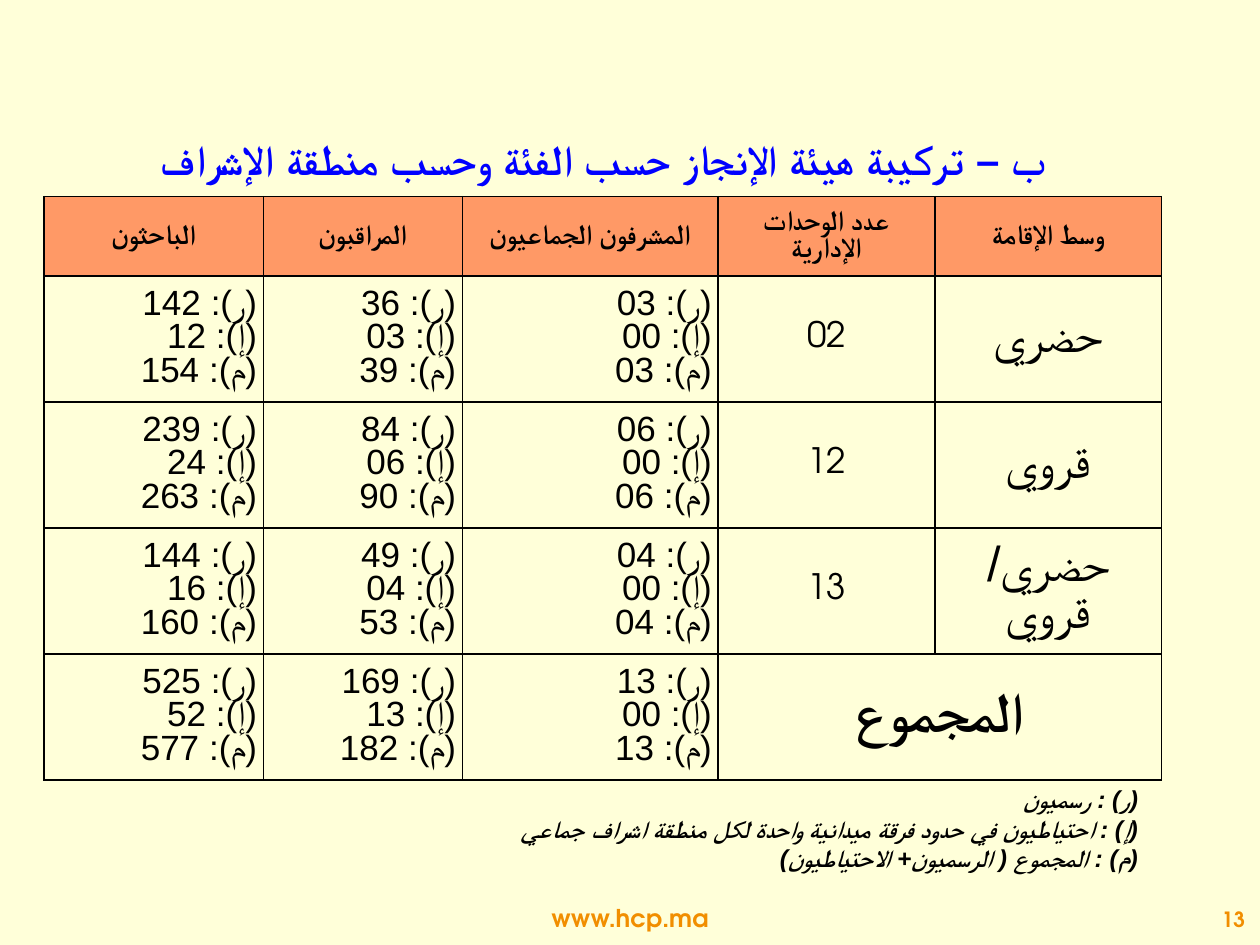
from dataclasses import dataclass

from lxml import etree
from pptx import Presentation
from pptx.dml.color import RGBColor
from pptx.enum.text import MSO_ANCHOR, MSO_AUTO_SIZE, PP_ALIGN
from pptx.oxml.ns import qn
from pptx.util import Inches, Pt

MID, RIGHT = PP_ALIGN.CENTER, PP_ALIGN.RIGHT
CENTER, BOTTOM = MSO_ANCHOR.MIDDLE, MSO_ANCHOR.BOTTOM
FIXED = MSO_AUTO_SIZE.NONE


@dataclass
class Theme:
    back: str = "FFFFD9"
    ink: str = "000000"
    title: str = "0000FF"
    head: str = "FF9966"
    accent: str = "F18E00"
    sans: str = "Arial"
    serif: str = "Times New Roman"
    round: str = "TeX Gyre Adventor"
    title_size: int = 24
    head_size: int = 16
    body_size: int = 20
    area_size: int = 28
    total_size: int = 32
    note_size: int = 14
    page_size: int = 12


class Deck:
    def __init__(self, prs, theme):
        self.theme = theme
        self.slide = prs.slides.add_slide(prs.slide_layouts[5])
        fill = self.slide.background.fill
        fill.solid()
        fill.fore_color.rgb = RGBColor.from_string(theme.back)

    def put(self, frame, lines, size, face, color=None, align=MID,
            bold=False, italic=False, rtl=False, space=None):
        """Fill a text frame, one paragraph a line."""
        for i, line in enumerate(lines):
            para = frame.add_paragraph() if i else frame.paragraphs[0]
            para.alignment = align
            if space:
                para.line_spacing = space
            if rtl:
                para._p.get_or_add_pPr().set("rtl", "1")
            run = para.add_run()
            run.text = line
            font = run.font
            font.size, font.name = Pt(size), face
            font.bold, font.italic = bold, italic
            font.color.rgb = RGBColor.from_string(color or self.theme.ink)
            # Arabic script takes the complex-script face
            script = self.theme.sans if face == self.theme.round else face
            etree.SubElement(run._r.get_or_add_rPr(), qn("a:cs"), typeface=script)

    def title(self, text, box):
        shape = self.slide.shapes.title
        shape.left, shape.top, shape.width, shape.height = map(Inches, box)
        frame = shape.text_frame
        frame.word_wrap, frame.auto_size = True, FIXED
        frame.vertical_anchor = BOTTOM
        frame.margin_right, frame.margin_bottom = Inches(0.43), Inches(0.19)
        self.put(frame, [text], self.theme.title_size, self.theme.sans,
                 self.theme.title, RIGHT, bold=True, rtl=True)

    def text(self, lines, box, size, face, **style):
        frame = self.slide.shapes.add_textbox(*map(Inches, box)).text_frame
        frame.word_wrap = True
        frame.vertical_anchor = CENTER
        self.put(frame, lines, size, face, **style)

    def cell(self, cell, lines, size, face, fill=None, **style):
        cell.vertical_anchor = CENTER
        cell.margin_left = cell.margin_right = Inches(0.05)
        cell.margin_top = cell.margin_bottom = 0
        self.put(cell.text_frame, lines, size, face, space=0.85, **style)
        self.paint(cell, fill)

    def paint(self, cell, fill=None):
        """Set a cell's fill and its four borders."""
        if fill:
            cell.fill.solid()
            cell.fill.fore_color.rgb = RGBColor.from_string(fill)
        else:
            cell.fill.background()
        props = cell._tc.get_or_add_tcPr()
        for i, side in enumerate(("lnL", "lnR", "lnT", "lnB")):
            line = etree.Element(qn("a:" + side), w=str(Pt(1)))
            solid = etree.SubElement(line, qn("a:solidFill"))
            etree.SubElement(solid, qn("a:srgbClr"), val=self.theme.ink)
            props.insert(i, line)

    def table(self, heads, rows, box, widths, tall):
        t = self.theme
        grid = self.slide.shapes.add_table(
            len(rows) + 1, len(heads), *map(Inches, box)).table
        grid.first_row = grid.horz_banding = False
        for col, width in zip(grid.columns, widths):
            col.width = Inches(width)
        for row, height in zip(grid.rows, tall):
            row.height = Inches(height)

        # Column heads
        for i, head in enumerate(heads):
            self.cell(grid.cell(0, i), [head], t.head_size, t.serif,
                      fill=t.head, bold=True)

        # Staff counts, then units and area, or the merged total
        for r, (area, units, staff) in enumerate(rows, 1):
            for c, counts in enumerate(staff):
                lines = [f"({key}): {n}" for key, n in zip(KEYS, counts.split())]
                self.cell(grid.cell(r, c), lines, t.body_size, t.round,
                          align=RIGHT, rtl=True)
            if units:
                self.cell(grid.cell(r, 3), [units], t.body_size, t.round)
                self.cell(grid.cell(r, 4), [area], t.area_size, t.sans, rtl=True)
            else:
                grid.cell(r, 3).merge(grid.cell(r, 4))
                self.cell(grid.cell(r, 3), [area], t.total_size, t.sans,
                          bold=True, rtl=True)
                self.paint(grid.cell(r, 4))


KEYS = ("ر", "إ", "م")
HEADS = ("الباحثون", "المراقبون", "المشرفون الجماعيون",
         "عدد الوحدات الإدارية", "وسط الإقامة")
ROWS = (
    ("حضري", "02", ("142 12 154", "36 03 39", "03 00 03")),
    ("قروي", "12", ("239 24 263", "84 06 90", "06 00 06")),
    ("حضري/ قروي", "13", ("144 16 160", "49 04 53", "04 00 04")),
    ("المجموع", None, ("525 52 577", "169 13 182", "13 00 13")),
)
NOTES = ("رسميون", "احتياطيون في حدود فرقة ميدانية واحدة لكل منطقة اشراف جماعي",
         "المجموع ( الرسميون+ الاحتياطيون)")


def main():
    prs = Presentation()
    prs.slide_width, prs.slide_height = Inches(10), Inches(7.5)
    t = Theme()
    deck = Deck(prs, t)

    # Title and table
    deck.title("ب – تركيبة هيئة الإنجاز حسب الفئة وحسب منطقة الإشراف",
               (1.09, 1.02, 7.64, 0.63))
    deck.table(HEADS, ROWS, (0.35, 1.56, 8.87, 4.63),
               (1.74, 1.58, 2.03, 1.72, 1.8), (0.63, 1, 1, 1, 1))

    # Key to the letters
    deck.text([f"({key}) : {note}" for key, note in zip(KEYS, NOTES)],
              (0.78, 6.17, 8.35, 0.81), t.note_size, t.sans,
              align=RIGHT, bold=True, italic=True, rtl=True)

    # Footer
    deck.text(["www.hcp.ma"], (3.82, 7.12, 2.36, 0.33), t.note_size, t.round,
              color=t.accent, bold=True)
    deck.text(["13"], (8.46, 7.12, 1.52, 0.35), t.page_size, t.round,
              color=t.accent, align=RIGHT, bold=True)
    prs.save("out.pptx")


if __name__ == "__main__":
    main()
